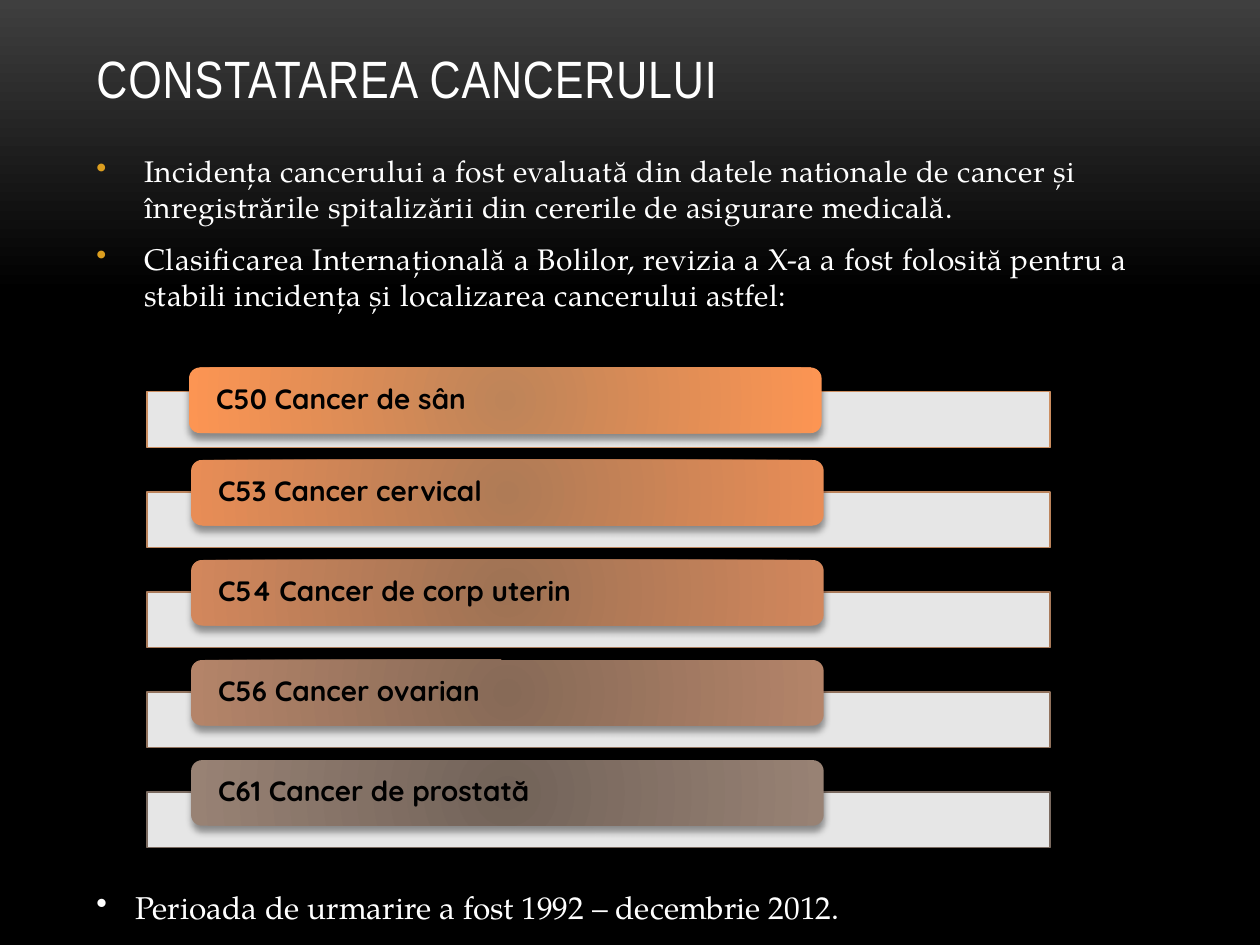
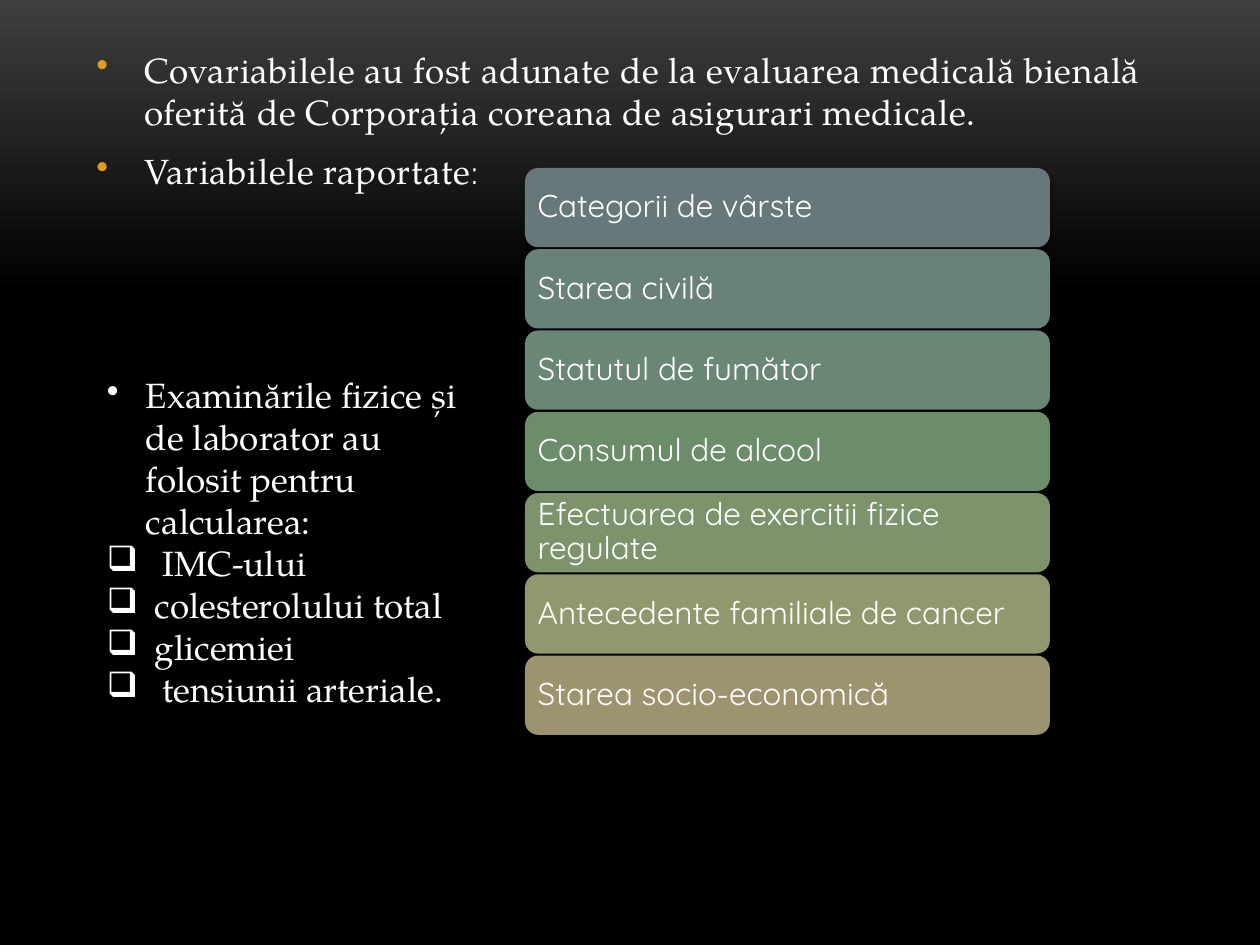
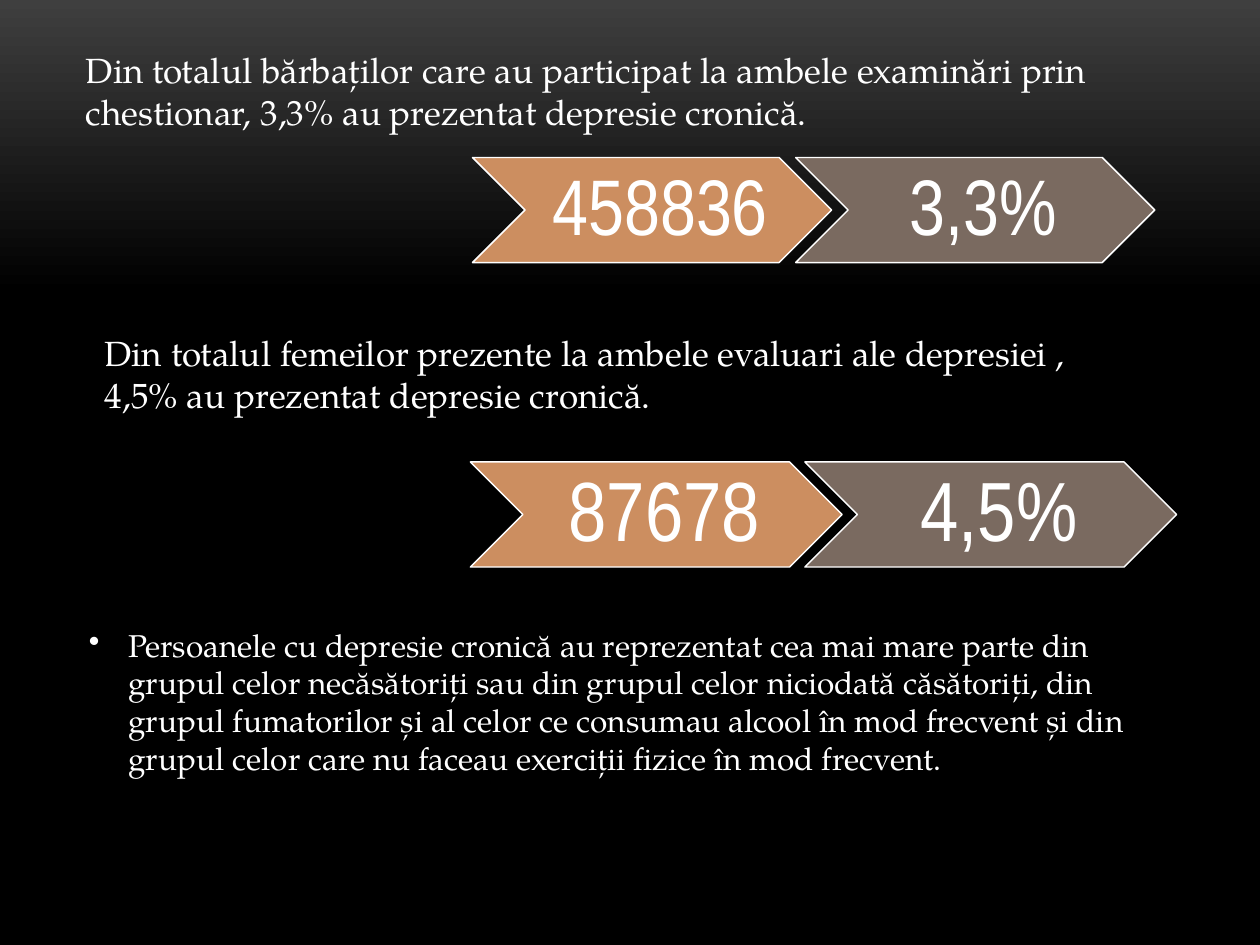
"""Build three dark slides on cancer findings, covariates and chronic depression."""
import pptx
import pptx.dml.color
import pptx.enum.shapes
import pptx.enum.text
import pptx.oxml
import pptx.oxml.ns
import pptx.util

COLORS = {
    "text": "FFFFFF", "ink": "000000", "bullet": "DC9E1F",
    "total": "CC8E60", "share": "7A6A60",
}
BACKGROUND = [(0, "3F3F3F"), (31, "000000"), (100, "000000")]
SERIF, SANS, LABEL = "TeX Gyre Pagella", "Arial Narrow", "Quicksand"
COLUMNS, ROWS = 120, 90
SLIDE_W, SLIDE_H = pptx.util.Inches(10), pptx.util.Inches(7.5)
SHAPES = pptx.enum.shapes.MSO_SHAPE
ALIGN = pptx.enum.text.PP_ALIGN
ANCHOR = pptx.enum.text.MSO_ANCHOR

CANCERS = [
    ("C50 Cancer de sân", "CC8E60", "BE8459", "FC9553"),
    ("C53 Cancer cervical", "BC845C", "AF7B56", "E88D56"),
    ("C54 Cancer de corp uterin", "A97A5A", "9E7254", "D2875C"),
    ("C56 Cancer ovarian", "91725D", "876A57", "B48469"),
    ("C61 Cancer de prostată", "7A6A60", "726359", "988274"),
]
VARIABLES = [
    ("Categorii de vârste", "67787B"),
    ("Starea civilă", "68817B"),
    ("Statutul de fumător", "698774"),
    ("Consumul de alcool", "6B8D6A"),
    ("Efectuarea de exercitii fizice regulate", "7C936B"),
    ("Antecedente familiale de cancer", "90986D"),
    ("Starea socio-economică", "9D936F"),
]


def rgb(color):
    return pptx.dml.color.RGBColor.from_string(color)


def grid(left, top, width, height):
    """Turn columns and rows into slide lengths."""
    return [round(n * size / count) for n, size, count in (
        (left, SLIDE_W, COLUMNS), (top, SLIDE_H, ROWS),
        (width, SLIDE_W, COLUMNS), (height, SLIDE_H, ROWS))]


def xml(markup):
    head, sep, tail = markup.partition(">")
    slash = "/" if head.endswith("/") else ""
    return pptx.oxml.parse_xml(
        f"{head.rstrip('/')} {pptx.oxml.ns.nsdecls('a')}{slash}{sep}{tail}")


def set_stops(fill_xml, stops):
    """Replace the stops of a gradient."""
    marks = "".join(f'<a:gs pos="{pos * 1000}"><a:srgbClr val="{color}"/></a:gs>'
                    for pos, color in stops)
    old = fill_xml.find(pptx.oxml.ns.qn("a:gsLst"))
    fill_xml.replace(old, xml(f"<a:gsLst>{marks}</a:gsLst>"))


def set_background(master):
    fill = master.background.fill
    fill.gradient()
    fill.gradient_angle = 270
    set_stops(master.element.xpath(".//p:bg//a:gradFill")[0], BACKGROUND)


def style_run(r, size, font, color=COLORS["text"], bold=None, spacing=0):
    r.font.size = pptx.util.Pt(size)
    r.font.name = font
    r.font.color.rgb = rgb(color)
    r.font.bold = bold
    if spacing:
        r._r.get_or_add_rPr().set("spc", str(round(spacing * 100)))


def add_bullet(p, char, color, indent):
    """Give a paragraph a hanging bullet."""
    pPr = p._p.get_or_add_pPr()
    hang = pptx.util.Inches(indent)
    pPr.set("marL", str(hang))
    pPr.set("indent", str(-hang))
    pPr.append(xml(f'<a:buClr><a:srgbClr val="{color}"/></a:buClr>'))
    pPr.append(xml(f'<a:buChar char="{char}"/>'))


def add_text(s, cell, text, size, font=SERIF, spacing=0, anchor=ANCHOR.TOP):
    """Add a wrapped text box with one paragraph a line."""
    tf = s.shapes.add_textbox(*grid(*cell)).text_frame
    tf.text = text
    tf.word_wrap = True
    tf.vertical_anchor = anchor
    for p in tf.paragraphs:
        for r in p.runs:
            style_run(r, size, font, spacing=spacing)
    return tf


def add_body(s, cell, lines, size):
    """Add the spaced main list with golden bullets."""
    tf = add_text(s, cell, "\n".join(lines), size, spacing=0.3)
    for i, p in enumerate(tf.paragraphs):
        add_bullet(p, "•", COLORS["bullet"], 0.38)
        p.space_before = pptx.util.Pt(0.2 * size if i else 0)
        p.space_after = pptx.util.Pt(6)
    return tf


def add_note(s, cell, text, size):
    """Add a text box whose first paragraph has a white bullet."""
    tf = add_text(s, cell, text, size)
    add_bullet(tf.paragraphs[0], "•", COLORS["text"], 0.31)
    return tf


def add_box(s, kind, cell, fill=None, line=None, width=0.75, shadow=True):
    sp = s.shapes.add_shape(kind, *grid(*cell))
    if fill:
        sp.fill.solid()
        sp.fill.fore_color.rgb = rgb(fill)
    if line:
        sp.line.color.rgb = rgb(line)
        sp.line.width = pptx.util.Pt(width)
    else:
        sp.line.fill.background()
    sp.shadow.inherit = False
    if shadow:
        effects = sp._element.spPr.find(pptx.oxml.ns.qn("a:effectLst"))
        effects.append(xml(
            '<a:outerShdw blurRad="50800" dist="43180" dir="5400000" rotWithShape="0">'
            '<a:srgbClr val="000000"><a:alpha val="40000"/></a:srgbClr></a:outerShdw>'))
    return sp


def label(sp, text, size, font, insets, color=COLORS["text"], bold=None, align=ALIGN.LEFT):
    """Write one centred-height label inside a shape."""
    tf = sp.text_frame
    tf.text = text
    tf.word_wrap = True
    tf.vertical_anchor = ANCHOR.MIDDLE
    (tf.margin_left, tf.margin_top,
     tf.margin_right, tf.margin_bottom) = map(pptx.util.Inches, insets)
    p = tf.paragraphs[0]
    p.alignment = align
    p.line_spacing = 0.9
    style_run(p.runs[0], size, font, color, bold)


def add_cancer(s, i, text, line, inner, outer):
    """Add a pale bar with its code pill above."""
    top = 37.32 + 9.53 * i
    bar = add_box(s, SHAPES.RECTANGLE, (14, top, 86, 5.28), COLORS["text"], line)
    bar._element.spPr.xpath("./a:solidFill/a:srgbClr")[0].append(xml('<a:alpha val="90000"/>'))
    left, pill_top = (18.2, top - 3.05) if i else (18, 35)
    pill = add_box(s, SHAPES.ROUNDED_RECTANGLE, (left, pill_top, 60.25, 6.25))
    pill.fill.gradient()
    fill_xml = pill._element.spPr.find(pptx.oxml.ns.qn("a:gradFill"))
    set_stops(fill_xml, [(0, inner), (100, outer)])
    fill_xml.replace(fill_xml.find(pptx.oxml.ns.qn("a:lin")), xml(
        '<a:path path="circle"><a:fillToRect l="100000" t="100000" r="100000" b="100000"/></a:path>'))
    label(pill, text, 16, LABEL, (0.19, 0, 0.19, 0), COLORS["ink"], True)


def add_chevrons(s, left, top, width, total, share, size):
    """Add a total and its share as two chevrons."""
    for i, (text, fill) in enumerate([(total, "total"), (share, "share")]):
        sp = add_box(s, SHAPES.CHEVRON, (left + 0.9 * width * i, top, width, 10),
                     COLORS[fill], COLORS["text"], 0.85, shadow=False)
        label(sp, text, size, SANS, (0.2, 0.07, 0.07, 0.07), align=ALIGN.CENTER)


def cancer_slide(s):
    add_text(s, (8, -4, 104, 15), "CONSTATAREA CANCERULUI", 30, SANS, 0.5, ANCHOR.BOTTOM)
    add_body(s, (8, 14, 105, 19), [
        "Incidența cancerului a fost evaluată din datele nationale de cancer și "
        "înregistrările spitalizării din cererile de asigurare medicală.",
        "Clasificarea Internațională a Bolilor, revizia a X-a a fost folosită pentru a "
        "stabili incidența și localizarea cancerului astfel:"], 17)
    for i, cancer in enumerate(CANCERS):
        add_cancer(s, i, *cancer)
    add_note(s, (8, 84, 105, 4.8), "Perioada de urmarire a fost 1992 – decembrie 2012.", 18)


def variables_slide(s):
    tf = add_body(s, (8, 4, 104, 71), [
        "Covariabilele au fost adunate de la evaluarea medicală bienală "
        "oferită de Corporația coreana de asigurari medicale.",
        "Variabilele raportate"], 20)
    r = tf.paragraphs[1].add_run()
    r.text = ":"
    style_run(r, 17, SANS, spacing=0.3)
    for i, (text, fill) in enumerate(VARIABLES):
        sp = add_box(s, SHAPES.ROUNDED_RECTANGLE, (50, 16 + 7.74 * i, 50, 7.55), fill)
        label(sp, text, 18, LABEL, [0.07] * 4)
    tests = [("IMC-ului", 0.44), ("colesterolului total", 0.38),
             ("glicemiei", 0.38), ("tensiunii arteriale.", 0.44)]
    intro = "Examinările fizice și de laborator au folosit pentru calcularea:"
    tf = add_note(s, (9, 35, 38, 33.5), "\n".join([intro] + [test for test, _ in tests]), 20)
    for p, (_, indent) in zip(tf.paragraphs[1:], tests):
        add_bullet(p, "❑", COLORS["text"], indent)


def depression_slide(s):
    add_chevrons(s, 45, 15, 34.2, "458836", "3,3%", 45)
    add_text(s, (7, 4, 105, 9.2),
             "Din totalul bărbaților care au participat la ambele examinări prin "
             "chestionar, 3,3% au prezentat depresie cronică.", 20)
    add_text(s, (8.8, 31, 101, 9.2),
             "Din totalul femeilor prezente la ambele evaluari ale depresiei , "
             "4,5% au prezentat depresie cronică.", 20)
    add_chevrons(s, 44.8, 44, 35.4, "87678", "4,5%", 48)
    add_note(s, (7.3, 59, 101, 15.7),
             "Persoanele cu depresie cronică au reprezentat cea mai mare parte din "
             "grupul celor necăsătoriți sau din grupul celor niciodată căsătoriți, din "
             "grupul fumatorilor și al celor ce consumau alcool în mod frecvent și din "
             "grupul celor care nu faceau exerciții fizice în mod frecvent.", 18)


def main():
    prs = pptx.Presentation()
    prs.slide_width, prs.slide_height = SLIDE_W, SLIDE_H
    set_background(prs.slide_master)
    for build in (cancer_slide, variables_slide, depression_slide):
        build(prs.slides.add_slide(prs.slide_layouts[6]))
    prs.save("out.pptx")


if __name__ == "__main__":
    main()
